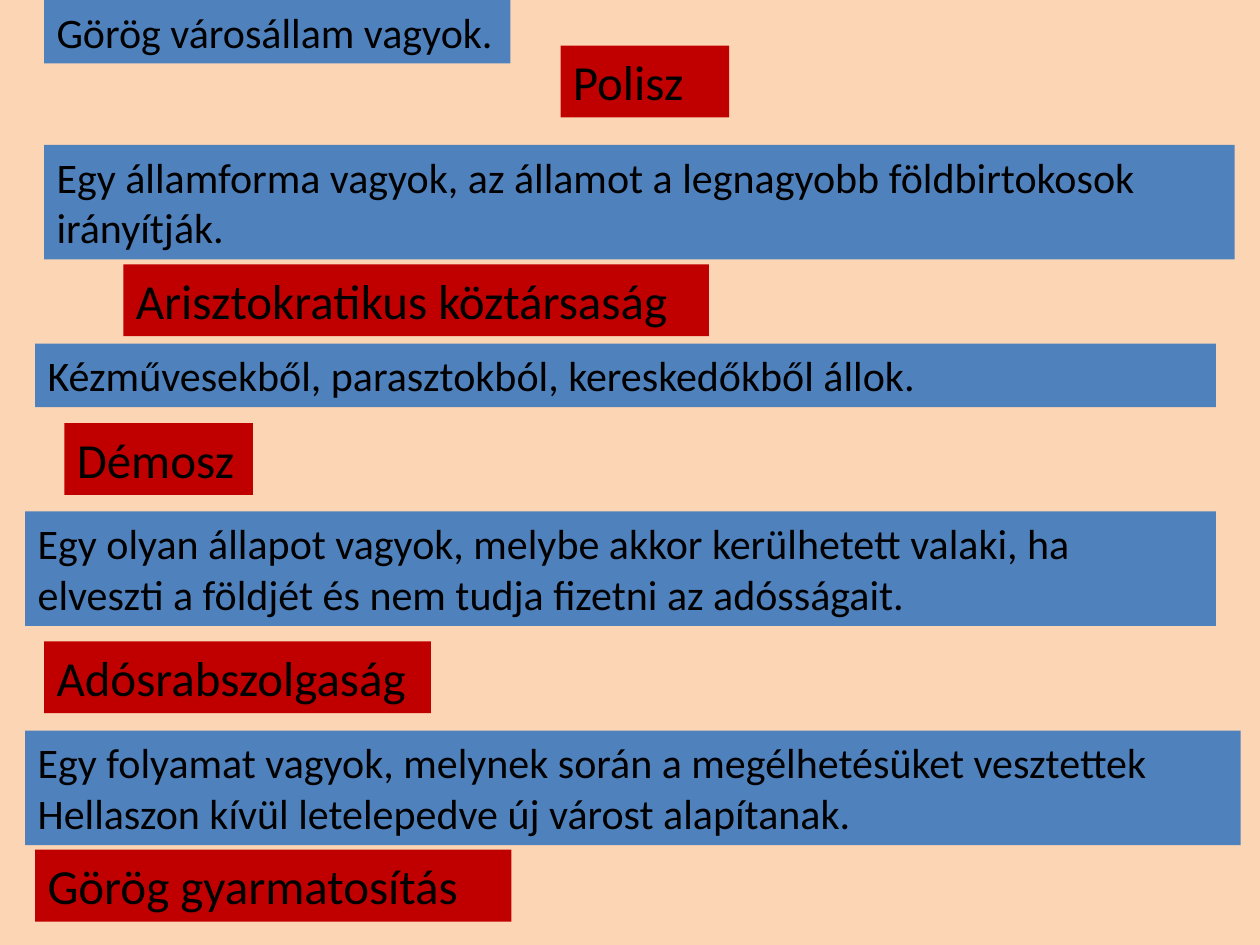
"""Build a slide of riddles about ancient Greece, each with its answer."""
import pptx
import pptx.dml.color
import pptx.enum.text
import pptx.util

Cm = pptx.util.Cm
RGBColor = pptx.dml.color.RGBColor

PEACH = RGBColor(0xFC, 0xD5, 0xB5)
BLUE = RGBColor(0x4F, 0x81, 0xBD)
RED = RGBColor(0xC0, 0x00, 0x00)
BLACK = RGBColor(0x00, 0x00, 0x00)

ONE_LINE, TWO_LINES, ANSWER_HEIGHT = 1.28, 2.31, 1.45

RIDDLES = [
    ("Görög városállam vagyok.", 0.89, 0, 9.4, ONE_LINE),
    ("Egy államforma vagyok, az államot a legnagyobb földbirtokosok irányítják.",
     0.89, 2.92, 24, TWO_LINES),
    ("Kézművesekből, parasztokból, kereskedőkből állok.", 0.71, 6.93, 23.8, ONE_LINE),
    ("Egy olyan állapot vagyok, melybe akkor kerülhetett valaki, ha elveszti "
     "a földjét és nem tudja fizetni az adósságait.", 0.51, 10.31, 24, TWO_LINES),
    ("Egy folyamat vagyok, melynek során a megélhetésüket vesztettek "
     "Hellaszon kívül letelepedve új várost alapítanak.", 0.51, 14.73, 24.5, TWO_LINES),
]
ANSWERS = [
    ("Polisz", 11.3, 0.92, 3.4),
    ("Arisztokratikus köztársaság", 2.49, 5.33, 11.8),
    ("Démosz", 1.3, 8.53, 3.8),
    ("Adósrabszolgaság", 0.89, 12.93, 7.8),
    ("Görög gyarmatosítás", 0.71, 17.13, 9.6),
]


class Page:
    def __init__(self, deck, font="Calibri"):
        self.font = font
        self.slide = deck.slides.add_slide(deck.slide_layouts[6])

    def background(self, color):
        fill = self.slide.background.fill
        fill.solid()
        fill.fore_color.rgb = color

    def label(self, text, left, top, width, height, color, size):
        box = self.slide.shapes.add_textbox(Cm(left), Cm(top), Cm(width), Cm(height))
        box.fill.solid()
        box.fill.fore_color.rgb = color
        frame = box.text_frame
        frame.word_wrap = True
        frame.auto_size = pptx.enum.text.MSO_AUTO_SIZE.SHAPE_TO_FIT_TEXT
        para = frame.paragraphs[0]
        para.text = text
        para.font.name = self.font
        para.font.size = pptx.util.Pt(size)
        para.font.color.rgb = BLACK

    def riddle(self, text, left, top, width, height):
        self.label(text, left, top, width, height, BLUE, 24)

    def answer(self, text, left, top, width):
        self.label(text, left, top, width, ANSWER_HEIGHT, RED, 28)


def main():
    deck = pptx.Presentation()
    deck.slide_width, deck.slide_height = Cm(25.4), Cm(19.05)
    page = Page(deck)
    page.background(PEACH)
    for riddle in RIDDLES:
        page.riddle(*riddle)
    for answer in ANSWERS:
        page.answer(*answer)
    deck.save("out.pptx")


if __name__ == "__main__":
    main()
